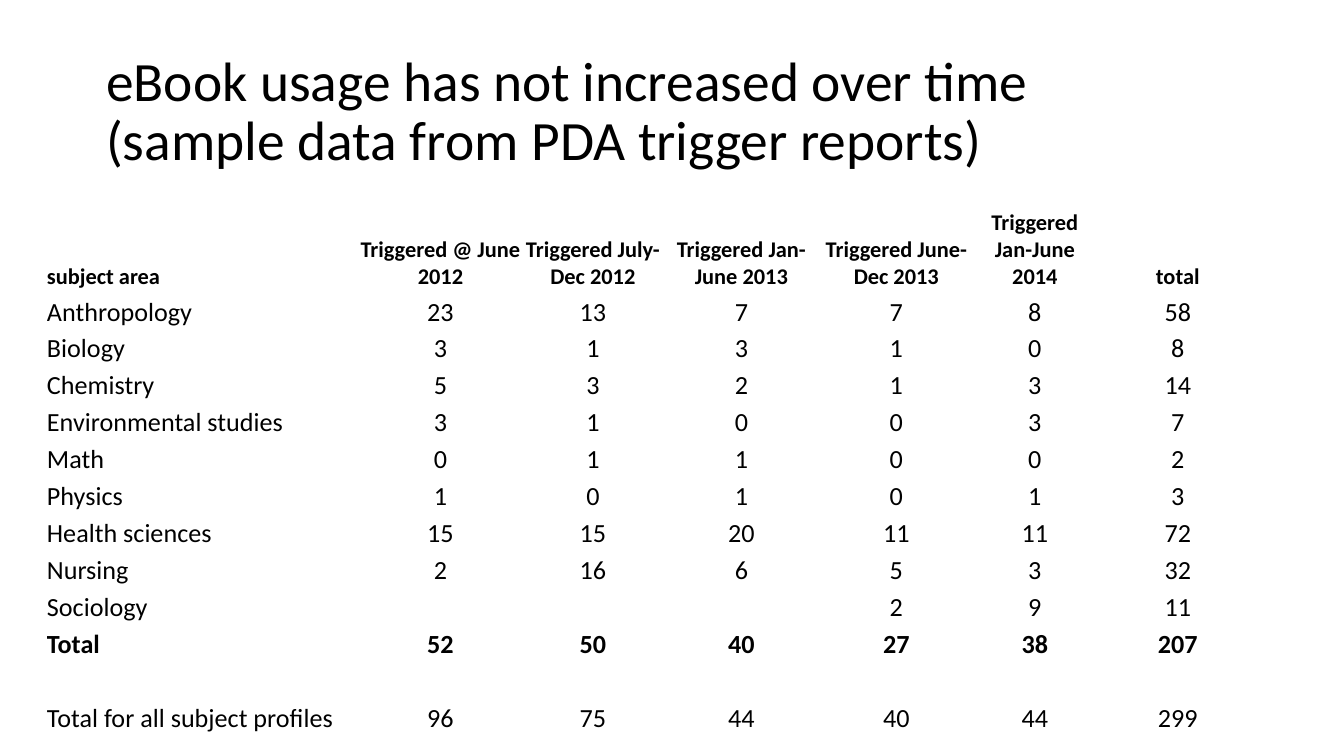
from pptx import Presentation
from pptx import util as u
from pptx.dml.color import RGBColor
from pptx.enum import text as t

PX = 914400 / 134.4
BLACK = RGBColor(0, 0, 0)
FONT = "Calibri"
WIDTHS = [313, 163, 142, 155, 155, 122, 164]
HEAD_H, ROW_H = 112, 37
HEADS = ["subject area", "Triggered @ June 2012", "Triggered July-Dec 2012",
         "Triggered Jan-June 2013", "Triggered June-Dec 2013",
         "Triggered Jan-June 2014", "total"]
ROWS = [
    ["Anthropology", 23, 13, 7, 7, 8, 58],
    ["Biology", 3, 1, 3, 1, 0, 8],
    ["Chemistry", 5, 3, 2, 1, 3, 14],
    ["Environmental studies", 3, 1, 0, 0, 3, 7],
    ["Math", 0, 1, 1, 0, 0, 2],
    ["Physics", 1, 0, 1, 0, 1, 3],
    ["Health sciences", 15, 15, 20, 11, 11, 72],
    ["Nursing", 2, 16, 6, 5, 3, 32],
    ["Sociology", "", "", "", 2, 9, 11],
    ["Total", 52, 50, 40, 27, 38, 207],
    [""] * 7,
    ["Total for all subject profiles", 96, 75, 44, 40, 44, 299],
]


def px(n):
    return u.Emu(round(n * PX))


def style(para, size, bold=False):
    font = para.font
    font.name, font.size, font.bold = FONT, u.Pt(size), bold
    font.color.rgb = BLACK


def add_title(slide, words):
    frame = slide.shapes.add_textbox(px(93), px(40), px(1159), px(146)).text_frame
    frame.word_wrap = True
    frame.vertical_anchor = t.MSO_ANCHOR.MIDDLE
    para = frame.paragraphs[0]
    para.text = words
    para.line_spacing = 0.9
    style(para, 29.7)


def fill_cell(cell, value, size, bold, align):
    cell.fill.background()
    cell.vertical_anchor = t.MSO_ANCHOR.BOTTOM
    cell.margin_left = cell.margin_right = cell.margin_top = px(1)
    cell.margin_bottom = 0
    para = cell.text_frame.paragraphs[0]
    para.text = str(value)
    para.alignment = align
    style(para, size, bold)
    if value == "":
        para._p.get_or_add_endParaRPr().set("sz", str(size * 100))


def add_usage(slide):
    data = [HEADS] + ROWS
    high = HEAD_H + ROW_H * len(ROWS)
    table = slide.shapes.add_table(len(data), len(HEADS), px(46), px(179),
                                   px(sum(WIDTHS)), px(high)).table
    table.first_row = table.horz_banding = False
    for col, wide in zip(table.columns, WIDTHS):
        col.width = px(wide)
    for r, row in enumerate(data):
        table.rows[r].height = px(ROW_H if r else HEAD_H)
        size = 14 if r else 12
        bold = r == 0 or row[0] == "Total"
        for c, value in enumerate(row):
            align = t.PP_ALIGN.CENTER if c else t.PP_ALIGN.LEFT
            fill_cell(table.cell(r, c), value, size, bold, align)


def main():
    deck = Presentation()
    deck.slide_width, deck.slide_height = px(1344), px(756)
    slide = deck.slides.add_slide(deck.slide_layouts[6])
    add_title(slide, "eBook usage has not increased over time\v"
                     "(sample data from PDA trigger reports)")
    add_usage(slide)
    deck.save("out.pptx")


if __name__ == "__main__":
    main()
